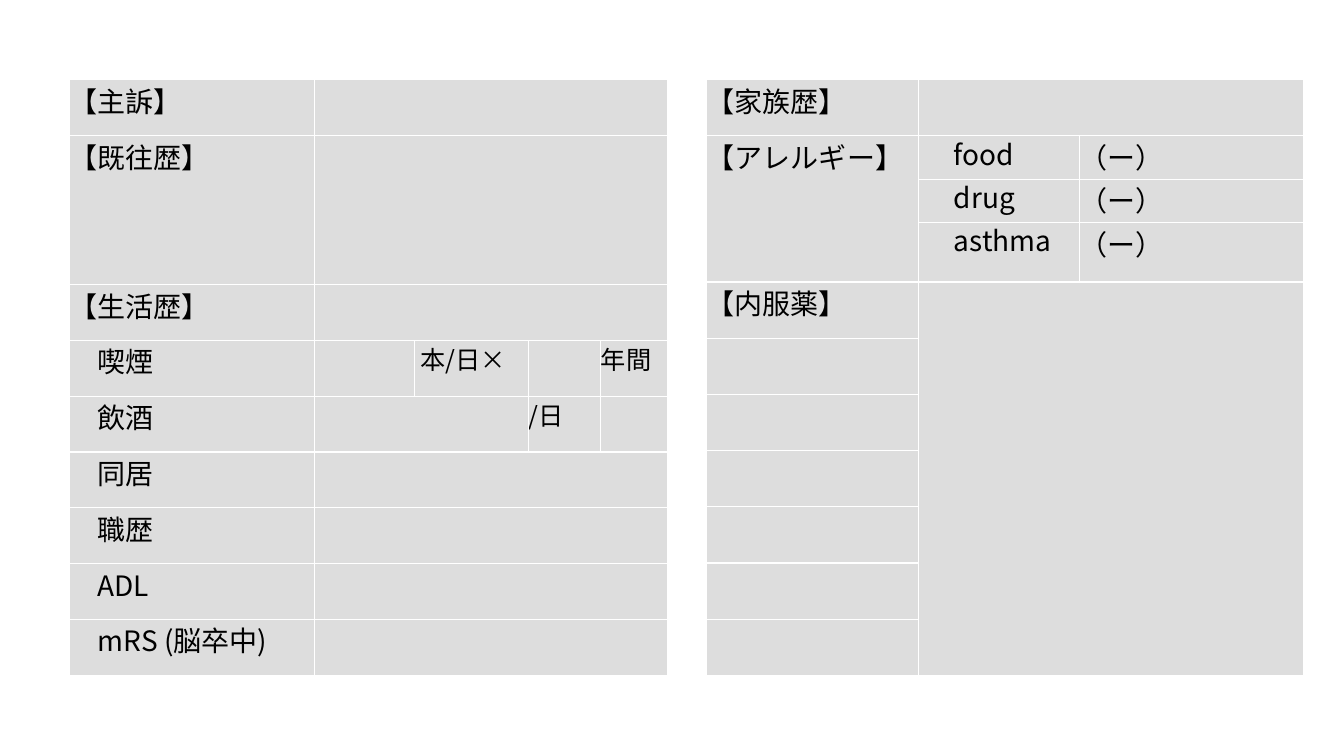
from dataclasses import dataclass

from lxml import etree
from pptx import Presentation
from pptx import util as u
from pptx.dml.color import RGBColor
from pptx.oxml import ns


@dataclass(frozen=True)
class Theme:
    font: str = "Noto Sans CJK JP"
    ink: str = "000000"
    cell: str = "DDDDDD"
    border: str = "FFFFFF"
    border_width: float = 1
    body: float = 20
    unit: float = 18


THEME = Theme()
SLIDE_WIDTH, SLIDE_HEIGHT = 13.33, 7.5
TABLE_TOP, TABLE_HEIGHT = 0.79, 5.91

# Rows given as None share the height the other rows leave.
# Texts and merges are keyed by (row, column); a merge is (rows, columns).
HISTORY = {
    "left": 0.69,
    "columns": [2.43, 0.99, 1.13, 0.72, 0.66],
    "rows": [None, 1.48] + [None] * 7,
    "headings": ["【主訴】", "【既往歴】", "【生活歴】", "　喫煙", "　飲酒",
                 "　同居", "　職歴", "　ADL", "　mRS (脳卒中)"],
    "units": {(3, 2): " 本/日×", (3, 4): "年間", (4, 3): "/日"},
    "merges": {(4, 1): (1, 2),
               **{(row, 1): (1, 4) for row in (0, 1, 2, 5, 6, 7, 8)}},
}
MEDICATION = {
    "left": 7.01,
    "columns": [2.1, 1.6, 2.22],
    "rows": [None, 0.43, 0.43, 0.59] + [None] * 7,
    "headings": ["【家族歴】", "【アレルギー】", "", "", "【内服薬】"],
    "allergens": {(1, 1): "food", (2, 1): "drug", (3, 1): "asthma"},
    "results": {(row, 2): "（ー）" for row in (1, 2, 3)},
    "merges": {(0, 1): (1, 2), (1, 0): (3, 1), (4, 1): (7, 2)},
}


def row_heights(rows):
    rest = TABLE_HEIGHT - sum(height for height in rows if height)
    return [height or rest / rows.count(None) for height in rows]


def style_cell(cell):
    """Give a cell its borders, fill and zero margins."""
    properties = cell._tc.get_or_add_tcPr()
    for side in ("a:lnL", "a:lnR", "a:lnT", "a:lnB"):
        line = etree.SubElement(properties, ns.qn(side),
                                w=str(u.Pt(THEME.border_width)))
        fill = etree.SubElement(line, ns.qn("a:solidFill"))
        etree.SubElement(fill, ns.qn("a:srgbClr"), val=THEME.border)
    cell.fill.solid()
    cell.fill.fore_color.rgb = RGBColor.from_string(THEME.cell)
    cell.margin_left = cell.margin_right = 0
    cell.margin_top = cell.margin_bottom = 0


def write(cell, words, size=THEME.body, indent=0, line_spacing=None,
          space_before=None, level=0):
    para = cell.text_frame.paragraphs[0]
    para.level = level
    para.line_spacing = line_spacing
    if space_before:
        para.space_before = u.Pt(space_before)
    if indent:
        properties = para._p.get_or_add_pPr()
        properties.set("marL", "0")
        properties.set("indent", str(u.Inches(indent)))
    span = para.add_run()
    span.text = words
    span.font.size = u.Pt(size)
    span.font.name = THEME.font
    span.font.color.rgb = RGBColor.from_string(THEME.ink)
    etree.SubElement(span._r.get_or_add_rPr(), ns.qn("a:ea"),
                     typeface=THEME.font)


def add_form(page, form):
    columns, rows = form["columns"], row_heights(form["rows"])
    table = page.shapes.add_table(
        len(rows), len(columns), u.Inches(form["left"]), u.Inches(TABLE_TOP),
        u.Inches(sum(columns)), u.Inches(TABLE_HEIGHT)).table
    table.first_row = table.horz_banding = False
    for column, width in zip(table.columns, columns):
        column.width = u.Inches(width)
    for row, height in zip(table.rows, rows):
        row.height = u.Inches(height)
    for cell in table.iter_cells():
        style_cell(cell)
    for (row, column), (down, across) in form["merges"].items():
        table.cell(row, column).merge(
            table.cell(row + down - 1, column + across - 1))

    headings = {(row, 0): words
                for row, words in enumerate(form["headings"]) if words}
    formats = [
        (headings, {}),
        (form.get("units", {}), {"size": THEME.unit}),
        (form.get("allergens", {}), {"indent": 0.35, "line_spacing": 0.9,
                                     "space_before": 5, "level": 1}),
        (form.get("results", {}), {}),
    ]
    for texts, style in formats:
        for place, words in texts.items():
            write(table.cell(*place), words, **style)


def main():
    deck = Presentation()
    deck.slide_width = u.Inches(SLIDE_WIDTH)
    deck.slide_height = u.Inches(SLIDE_HEIGHT)
    page = deck.slides.add_slide(deck.slide_layouts[6])
    for form in (HISTORY, MEDICATION):
        add_form(page, form)
    deck.save("out.pptx")


if __name__ == "__main__":
    main()
